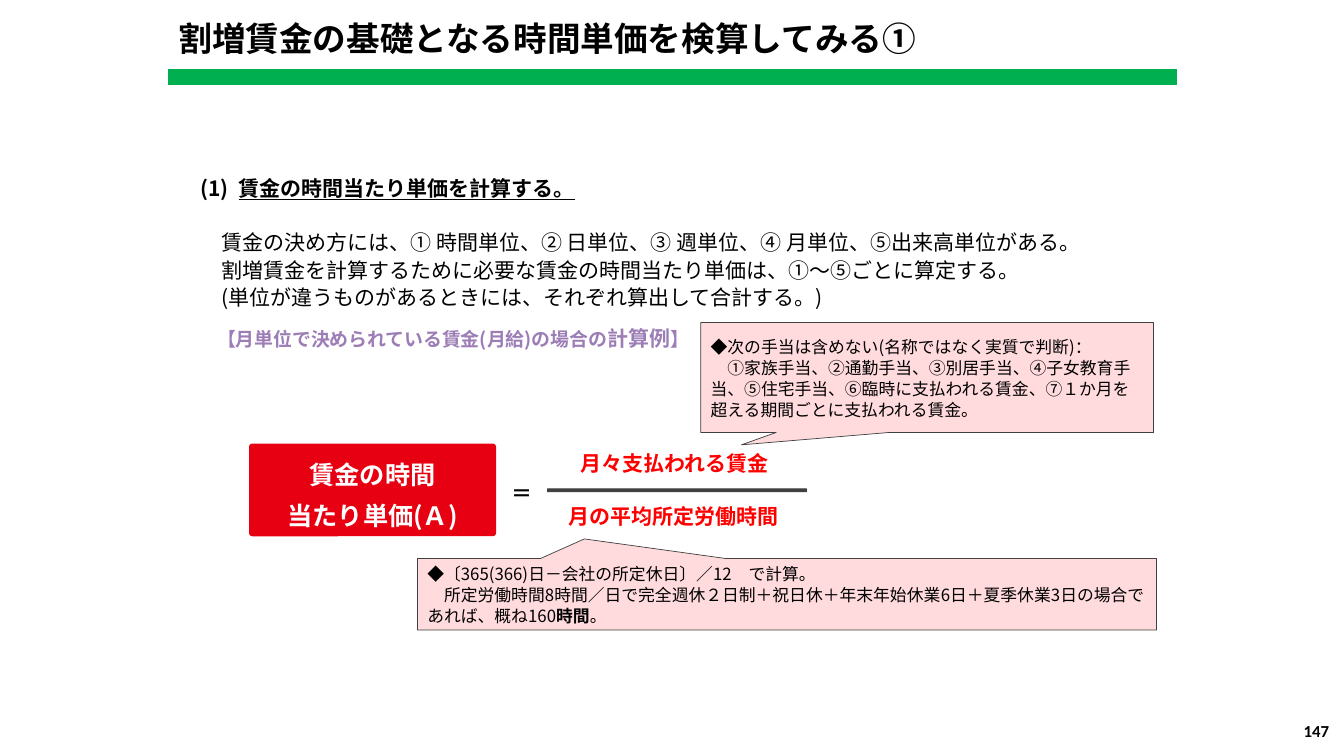
"""Build the slide that checks the hourly rate behind premium wages."""
from dataclasses import dataclass
from typing import Optional

from lxml import etree
from pptx import Presentation
from pptx import util as u
from pptx.dml.color import RGBColor
from pptx.enum import shapes, text
from pptx.oxml.ns import qn

JAPANESE = "Noto Sans CJK JP"
BLACK, WHITE, RED, GREY = "000000", "FFFFFF", "FF0000", "404040"
PINK, GREEN, PURPLE, CRIMSON = "FFB9BE", "00B050", "9C7DB6", "E60012"
ROUND = shapes.MSO_SHAPE.ROUNDED_RECTANGLE
CALLOUT = shapes.MSO_SHAPE.RECTANGULAR_CALLOUT
LEFT, CENTER, RIGHT = text.PP_ALIGN.LEFT, text.PP_ALIGN.CENTER, text.PP_ALIGN.RIGHT


@dataclass(frozen=True)
class Run:
    """A stretch of text; unset traits come from its block."""
    words: str
    size: Optional[float] = None
    bold: Optional[bool] = None
    underline: bool = False


@dataclass(frozen=True)
class Style:
    """Text format shared by a whole block."""
    size: float = 15
    color: str = BLACK
    bold: bool = False
    align: text.PP_ALIGN = LEFT
    spacing: object = None
    font: str = JAPANESE


@dataclass(frozen=True)
class Block:
    """A shape with its place, look and paragraphs."""
    place: tuple[float, float, float, float]
    lines: tuple[tuple[Run, ...], ...] = ()
    style: Style = Style()
    fill: Optional[str] = None
    border: Optional[str] = None
    border_width: float = 0.5
    kind: shapes.MSO_SHAPE = ROUND
    adjust: tuple[float, ...] = (0.036,)
    opacity: Optional[int] = None
    inset: float = 0.03


def paint(target, color: str) -> None:
    """Make a fill solid in a hex colour."""
    target.solid()
    target.fore_color.rgb = RGBColor.from_string(color)


def write(frame, lines: tuple[tuple[Run, ...], ...], style: Style) -> None:
    """Fill a text frame and format its paragraphs and runs."""
    frame.word_wrap = True
    frame.text = "\n".join("" for _ in lines)
    for paragraph, runs in zip(frame.paragraphs, lines):
        paragraph.alignment = style.align
        if style.spacing:
            paragraph.line_spacing = style.spacing
        for part in runs:
            run = paragraph.add_run()
            run.text = part.words
            font = run.font
            font.size = u.Pt(part.size or style.size)
            font.bold = style.bold if part.bold is None else part.bold
            font.underline = part.underline
            font.name = style.font
            paint(font.fill, style.color)
            east_asian = etree.Element(qn("a:ea"), typeface=style.font)
            font._element.find(qn("a:latin")).addnext(east_asian)


def draw(slide, block: Block):
    """Draw one block and return its shape."""
    shape = slide.shapes.add_shape(block.kind, *map(u.Inches, block.place))
    shape.shadow.inherit = False
    for index, value in enumerate(block.adjust):
        shape.adjustments[index] = value
    if block.fill:
        paint(shape.fill, block.fill)
    else:
        shape.fill.background()
    if block.opacity:
        color = shape.fill._xPr.find(qn("a:solidFill"))[0]
        etree.SubElement(color, qn("a:alpha"), val=str(block.opacity * 1000))
    if block.border:
        paint(shape.line.fill, block.border)
        shape.line.width = u.Pt(block.border_width)
    else:
        shape.line.fill.background()
    if block.lines:
        frame = shape.text_frame
        frame.vertical_anchor = text.MSO_ANCHOR.MIDDLE
        if block.kind == ROUND:
            frame.margin_left = frame.margin_right = u.Inches(block.inset)
            frame.margin_top = frame.margin_bottom = u.Inches(block.inset)
        write(frame, block.lines, block.style)
    return shape


def number_heading(frame) -> None:
    """Number the heading and set the explanation apart from it."""
    heading, explanation = frame.paragraphs[:2]
    properties = heading._p.get_or_add_pPr()
    properties.set("marL", str(u.Inches(0.38)))
    properties.set("indent", str(u.Inches(-0.38)))
    etree.SubElement(properties, qn("a:buFont"), typeface=JAPANESE)
    etree.SubElement(properties, qn("a:buAutoNum"), type="arabicParenBoth")
    explanation.space_before = u.Pt(19.5)


def callout(place: tuple[float, float, float, float], tip: tuple[float, float],
            lines: tuple[tuple[Run, ...], ...]) -> Block:
    """Describe a pink note that points at a term of the formula."""
    return Block(place, lines, Style(12, spacing=u.Pt(15)), PINK, GREY,
                 kind=CALLOUT, adjust=tip, opacity=50)


EXPLANATION = Block((1.94, 1.61, 9.51, 1.57), (
    (Run("賃金の時間当たり単価を計算する。", bold=True, underline=True),),
    (Run("　賃金の決め方には、① 時間単位、② 日単位、③ 週単位、④ 月単位、⑤出来高単位がある。"),),
    (Run("　割増賃金を計算するために必要な賃金の時間当たり単価は、①～⑤ごとに算定する。"),),
    (Run("　(単位が違うものがあるときには、それぞれ算出して合計する。)"),),
), Style(spacing=u.Pt(19.5)))

TERM = Style(15, RED, True, CENTER)
FORMULA = (
    Block((2.12, 3.2, 5.43, 0.31), ((
        Run("【月単位で決められている賃金(月給)の場合の"), Run("計算例", 15), Run("】")),),
        Style(13.5, PURPLE, True)),
    Block((5.04, 4.74, 0.27, 0.3), ((Run("＝"),),), Style(bold=True), WHITE),
    Block((5.43, 4.85, 2.57, 0.03), fill=GREY, border=GREY),
    Block((5.48, 4.4, 2.42, 0.38), ((Run("月々支払われる賃金"),),), TERM, WHITE),
    Block((2.47, 4.4, 2.45, 0.92), ((Run("賃金の時間"),), (Run("当たり単価(Ａ)"),)),
          Style(18, WHITE, True, CENTER, 1.33), CRIMSON),
    Block((5.47, 4.93, 2.42, 0.38), ((Run("月の平均所定労働時間"),),), TERM, WHITE),
    callout((6.95, 3.2, 4.49, 1.09), (-0.41, 0.613), (
        (Run("◆次の手当は含めない(名称ではなく実質で判断)："),),
        (Run("　①家族手当、②通勤手当、③別居手当、④子女教育手当、⑤住宅手当、"
             "⑥臨時に支払われる賃金、⑦１か月を超える期間ごとに支払われる賃金。"),))),
    callout((4.14, 5.54, 7.33, 0.71), (-0.274, -0.773), (
        (Run("◆〔365(366)日－会社の所定休日〕／12　で計算。"),),
        (Run("　所定労働時間8時間／日で完全週休２日制＋祝日休＋年末年始休業6日"
             "＋夏季休業3日の場合であれば、概ね160"),
         Run("時間", bold=True), Run("。")))),
    Block((1.67, 0.69, 10, 0.15), fill=GREEN, border=GREEN, border_width=1,
          kind=shapes.MSO_SHAPE.RECTANGLE, adjust=()),
)


def main() -> None:
    """Build and save the slide."""
    deck = Presentation()
    deck.slide_width, deck.slide_height = u.Inches(13.33), u.Inches(7.5)
    slide = deck.slides.add_slide(deck.slide_layouts[5])

    title = slide.shapes.title
    title.left, title.top = u.Inches(1.67), u.Inches(0.13)
    title.width, title.height = u.Inches(8.86), u.Inches(0.5)
    title.text_frame.auto_size = text.MSO_AUTO_SIZE.NONE
    title.text_frame.vertical_anchor = text.MSO_ANCHOR.TOP
    write(title.text_frame, ((Run("割増賃金の基礎となる時間単価を検算してみる①"),),),
          Style(24, bold=True))

    number_heading(draw(slide, EXPLANATION).text_frame)
    for block in FORMULA:
        draw(slide, block)

    page = slide.shapes.add_textbox(*map(u.Inches, (10.17, 7.1, 3.11, 0.4)))
    write(page.text_frame, ((Run("147"),),),
          Style(12, bold=True, align=RIGHT, font="Calibri"))
    deck.save("out.pptx")


if __name__ == "__main__":
    main()
